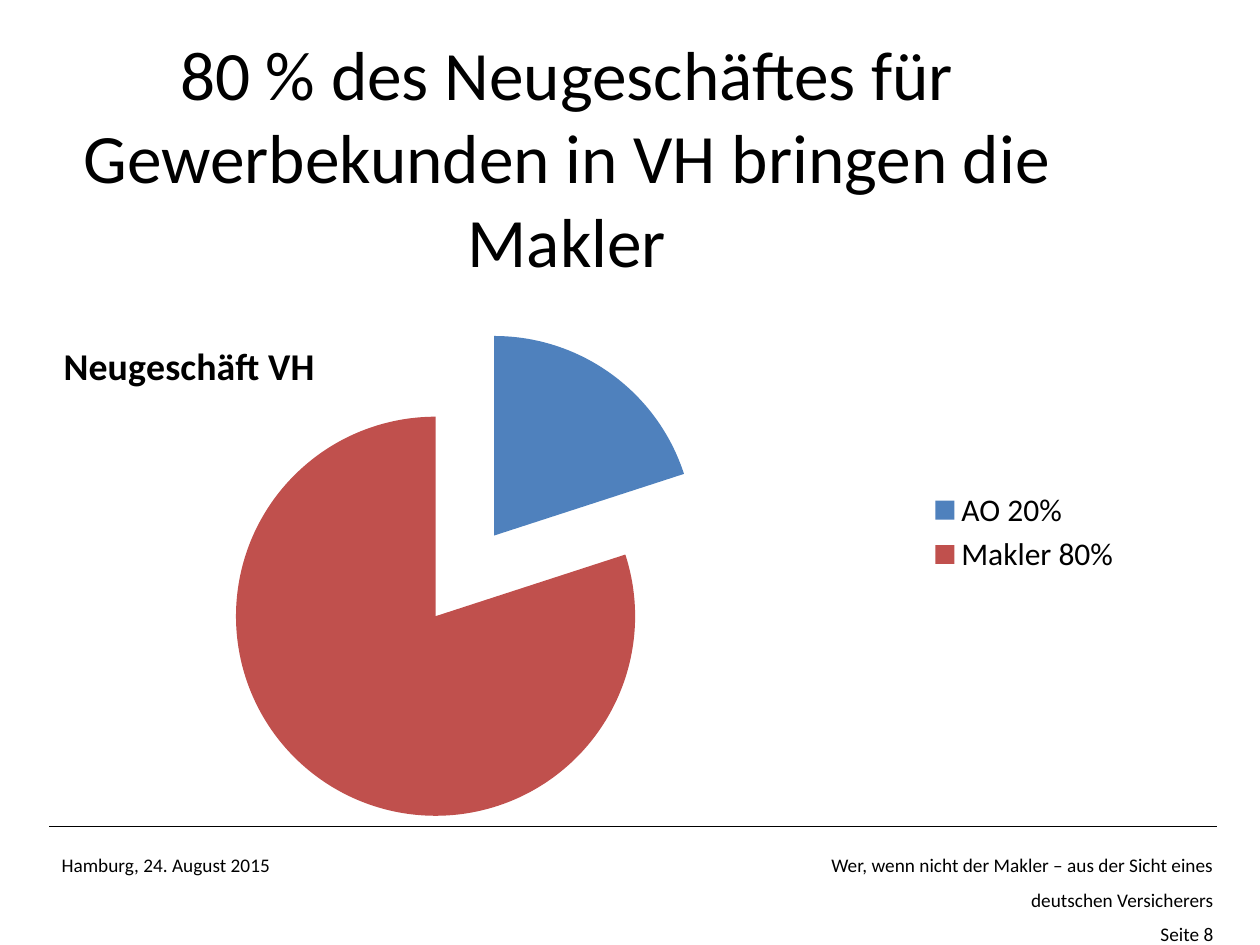
from lxml.etree import SubElement
from pptx import Presentation
from pptx.chart.data import CategoryChartData
from pptx.dml.color import RGBColor
from pptx.enum.chart import XL_CHART_TYPE as ChartType, XL_LEGEND_POSITION as LegendPosition
from pptx.enum.shapes import MSO_CONNECTOR as Connector
from pptx.enum.text import MSO_ANCHOR as Anchor, MSO_AUTO_SIZE as AutoSize, PP_ALIGN as Align
from pptx.oxml import parse_xml
from pptx.oxml.ns import nsdecls, qn
from pptx.util import Pt

HEADLINE = "80 % des Neugeschäftes für Gewerbekunden in VH bringen die Makler"
SERIES = "Neugeschäft VH"
SHARES = [("AO 20%", 20, "broker_blue"), ("Makler 80%", 80, "broker_red")]
FOOTERS = [
    (["Hamburg, 24. August 2015"], (28.1, 477.4, 134.6, 27.4), Align.LEFT, False),
    (["Wer, wenn nicht der Makler – aus der Sicht eines deutschen Versicherers", "Seite 8"],
     (465.1, 477.4, 235.4, 67), Align.RIGHT, True),
]
COLORS = {"text": "000000", "broker_blue": "4F81BD", "broker_red": "C0504D"}
FONT = "Calibri"
EXPLOSION = 25
HEADLINE_BOX = (0, 21.6, 648, 135.4)
CHART_BOX = (0, 126, 648, 356.4)
RULE = (28.1, 472.3, 695.5, 472.3)


def color(name):
    return RGBColor.from_string(COLORS[name])


def points(lengths):
    return [Pt(length) for length in lengths]


def style(font, size, bold=False):
    font.name, font.size, font.bold = FONT, Pt(size), bold
    font.color.rgb = color("text")


def add_run(paragraph, wording, size, bold=False):
    run = paragraph.add_run()
    run.text = wording
    style(run.font, size, bold)


def set_layout(parent, index, **fractions):
    for old in parent.findall(qn("c:layout")):
        parent.remove(old)
    layout = parse_xml(f"<c:layout {nsdecls('c')}><c:manualLayout/></c:layout>")
    manual = layout[0]
    if "w" in fractions:
        SubElement(manual, qn("c:layoutTarget")).set("val", "inner")
    for axis in "xy":
        SubElement(manual, qn(f"c:{axis}Mode")).set("val", "edge")
    for key, fraction in fractions.items():
        SubElement(manual, qn(f"c:{key}")).set("val", str(fraction))
    parent.insert(index, layout)


def add_headline(slide):
    headline = slide.shapes.title
    headline.left, headline.top, headline.width, headline.height = points(HEADLINE_BOX)
    frame = headline.text_frame
    frame.word_wrap, frame.vertical_anchor = True, Anchor.MIDDLE
    frame.auto_size = AutoSize.NONE
    frame.paragraphs[0].alignment = Align.CENTER
    add_run(frame.paragraphs[0], HEADLINE, 39.6)


def add_share_chart(slide):
    data = CategoryChartData()
    data.categories = [label for label, _, _ in SHARES]
    data.add_series(SERIES, [share for _, share, _ in SHARES])
    chart = slide.shapes.add_chart(ChartType.PIE, *points(CHART_BOX), data).chart
    style(chart.font, 18)
    chart.has_title = True
    heading = chart.chart_title
    add_run(heading.text_frame.paragraphs[0], SERIES, 21.6, True)
    heading.include_in_layout = False
    set_layout(heading._element, 1, x=0.05, y=0.18)
    chart.has_legend = True
    chart.legend.position = LegendPosition.RIGHT
    chart.legend.include_in_layout = False
    style(chart.legend.font, 18)
    pie = chart.plots[0]
    pie.vary_by_categories = True
    set_layout(pie._element.getparent(), 0, x=0.19, y=0.17, w=0.44, h=0.8)
    series = pie.series[0]
    for index, (_, _, shade) in enumerate(SHARES):
        fill = series.points[index].format.fill
        fill.solid()
        fill.fore_color.rgb = color(shade)
    explosion = parse_xml(f'<c:explosion {nsdecls("c")} val="{EXPLOSION}"/>')
    series._element.find(qn("c:dPt")).addprevious(explosion)


def add_footers(slide):
    rule = slide.shapes.add_connector(Connector.STRAIGHT, *points(RULE))
    rule.line.color.rgb, rule.line.width = color("text"), Pt(0.75)
    SubElement(rule._element.spPr, qn("a:effectLst"))
    for lines, box, alignment, wraps in FOOTERS:
        frame = slide.shapes.add_textbox(*points(box)).text_frame
        frame.word_wrap, frame.auto_size = wraps, AutoSize.SHAPE_TO_FIT_TEXT
        for index, line in enumerate(lines):
            paragraph = frame.add_paragraph() if index else frame.paragraphs[0]
            paragraph.alignment, paragraph.line_spacing = alignment, 1.5
            add_run(paragraph, line, 11)


def main():
    """Build the slide on new commercial business by sales channel."""
    deck = Presentation()
    deck.slide_width, deck.slide_height = Pt(720), Pt(540)
    slide = deck.slides.add_slide(deck.slide_layouts[5])
    add_footers(slide)
    add_headline(slide)
    add_share_chart(slide)
    deck.save("out.pptx")


if __name__ == "__main__":
    main()
